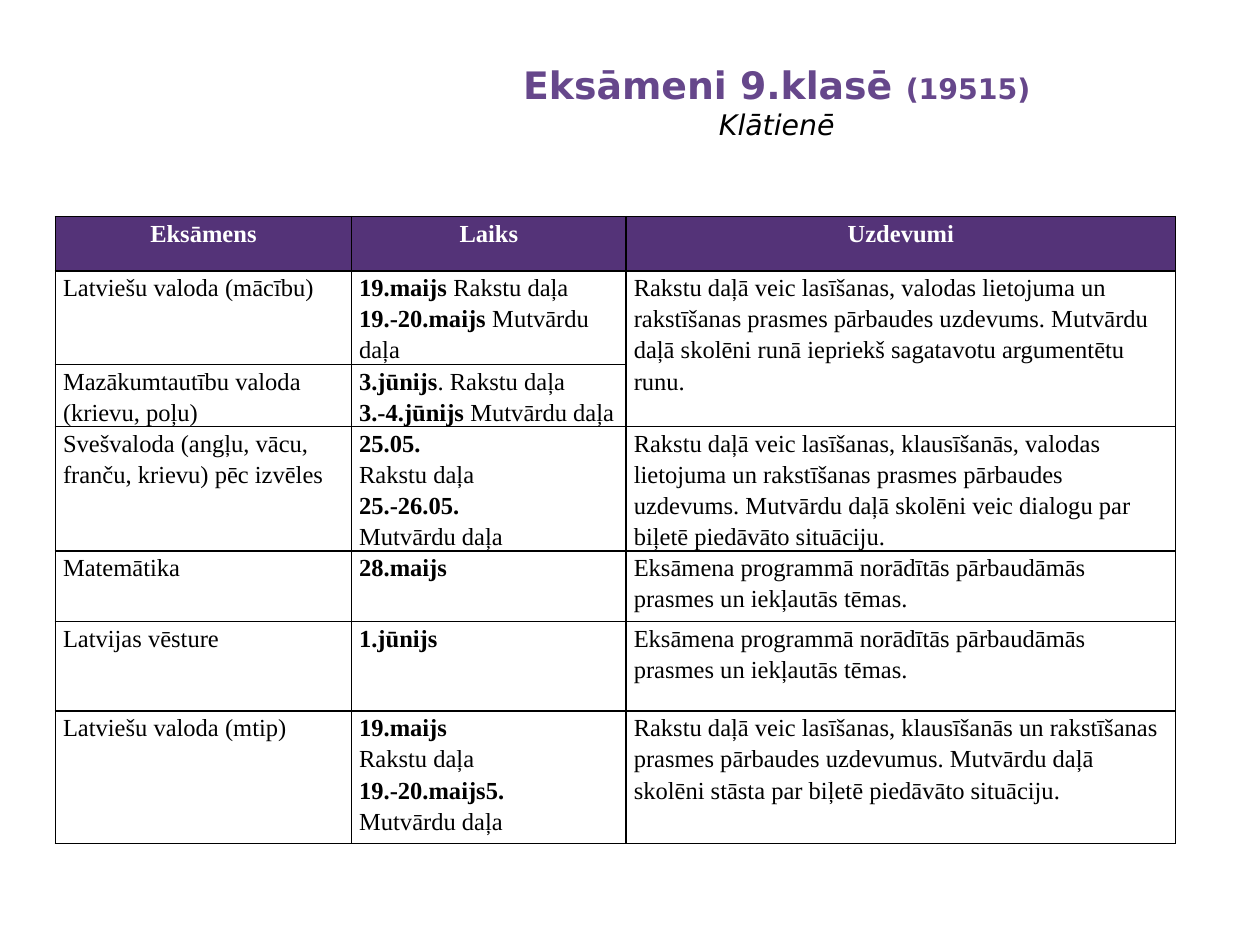
"""Build the slide with the grade 9 exam timetable."""
from lxml import etree
from pptx import Presentation
from pptx.dml.color import RGBColor
from pptx.enum import text
from pptx.oxml import ns
from pptx.util import Inches, Pt

PURPLE = RGBColor(0x66, 0x47, 0x8B)
HEADER = RGBColor(0x54, 0x33, 0x78)
WHITE = RGBColor(0xFF, 0xFF, 0xFF)
BLACK = RGBColor(0x00, 0x00, 0x00)


def add_run(p, words, size=14, font="Times New Roman", color=BLACK, bold=False, italic=False):
    r = p.add_run()
    r.text = words
    r.font.size = Pt(size)
    r.font.name = font
    r.font.color.rgb = color
    r.font.bold = bold
    r.font.italic = italic


def add_borders(cell):
    tcPr = cell._tc.get_or_add_tcPr()
    for i, side in enumerate(("lnL", "lnR", "lnT", "lnB")):
        ln = etree.Element(ns.qn(f"a:{side}"), w=str(Pt(1)))
        fill = etree.SubElement(ln, ns.qn("a:solidFill"))
        etree.SubElement(fill, ns.qn("a:srgbClr"), val=str(BLACK))
        tcPr.insert(i, ln)


prs = Presentation()
prs.slide_width, prs.slide_height = Inches(10), Inches(7.5)
s = prs.slides.add_slide(prs.slide_layouts[5])

title = s.shapes.title
title.left, title.top = Inches(2.83), Inches(0.42)
title.width, title.height = Inches(6.67), Inches(1.13)
tf = title.text_frame
tf.word_wrap = True
tf.auto_size = text.MSO_AUTO_SIZE.NONE
tf.vertical_anchor = text.MSO_ANCHOR.TOP
tf.margin_top = Inches(0.07)
p = tf.paragraphs[0]
p.alignment = text.PP_ALIGN.CENTER
add_run(p, "Eksāmeni 9.klasē ", size=21.6, font="DejaVu Sans", color=PURPLE, bold=True)
add_run(p, "(19515)", size=16.2, font="DejaVu Sans", color=PURPLE, bold=True)
p.add_line_break()
add_run(p, "Klātienē", size=16.2, font="DejaVu Sans", italic=True)

WRITTEN, ORAL = "Rakstu daļa", "Mutvārdu daļa"
PROGRAMME = "Eksāmena programmā norādītās pārbaudāmās prasmes un iekļautās tēmas."
headings = ["Eksāmens", "Laiks", "Uzdevumi"]
exams = [
    ("Latviešu valoda (mācību)",
     [("19.maijs", " " + WRITTEN), ("19.-20.maijs ", ORAL)],
     "Rakstu daļā veic lasīšanas, valodas lietojuma un rakstīšanas prasmes pārbaudes uzdevums. "
     "Mutvārdu daļā skolēni runā iepriekš sagatavotu argumentētu runu."),
    ("Mazākumtautību valoda (krievu, poļu)",
     [("3.jūnijs", ". " + WRITTEN), ("3.-4.jūnijs ", ORAL)], ""),
    ("Svešvaloda (angļu, vācu, franču, krievu) pēc izvēles",
     [("25.05.", ""), ("", WRITTEN), ("25.-26.05.", ""), ("", ORAL)],
     "Rakstu daļā veic lasīšanas, klausīšanās, valodas lietojuma un rakstīšanas prasmes "
     "pārbaudes uzdevums. Mutvārdu daļā skolēni veic dialogu par biļetē piedāvāto situāciju."),
    ("Matemātika", [("28.maijs", "")], PROGRAMME),
    ("Latvijas vēsture", [("1.jūnijs", "")], PROGRAMME),
    ("Latviešu valoda (mtip)",
     [("19.maijs", ""), ("", WRITTEN), ("19.-20.maijs5.", ""), ("", ORAL)],
     "Rakstu daļā veic lasīšanas, klausīšanās un rakstīšanas prasmes pārbaudes uzdevumus. "
     "Mutvārdu daļā skolēni stāsta par biļetē piedāvāto situāciju."),
]
rows = [[[(heading, "")] for heading in headings]]
rows += [[[("", exam)], times, [("", task)]] for exam, times, task in exams]
widths = [2.35, 2.18, 4.36]
heights = [0.43, 0.49, 0.45, 0.82, 0.56, 0.71, 1.05]

table = s.shapes.add_table(len(rows), len(widths), Inches(0.44), Inches(1.72),
                           Inches(sum(widths)), Inches(sum(heights))).table
table.horz_banding = False
for column, width in zip(table.columns, widths):
    column.width = Inches(width)
for row, height in zip(table.rows, heights):
    row.height = Inches(height)
table.cell(1, 2).merge(table.cell(2, 2))

for i, row in enumerate(rows):
    for j, lines in enumerate(row):
        cell = table.cell(i, j)
        cell.margin_left = cell.margin_right = Inches(0.06)
        cell.margin_top = cell.margin_bottom = 0
        if i == 0:
            cell.fill.solid()
            cell.fill.fore_color.rgb = HEADER
        else:
            cell.fill.background()
        add_borders(cell)
        if cell.is_spanned:
            continue
        tf = cell.text_frame
        for k, (strong, plain) in enumerate(lines):
            p = tf.add_paragraph() if k else tf.paragraphs[0]
            p.line_spacing = 1.15
            p.alignment = text.PP_ALIGN.LEFT if i else text.PP_ALIGN.CENTER
            if strong:
                add_run(p, strong, color=BLACK if i else WHITE, bold=True)
            if plain:
                add_run(p, plain)

prs.save("out.pptx")
